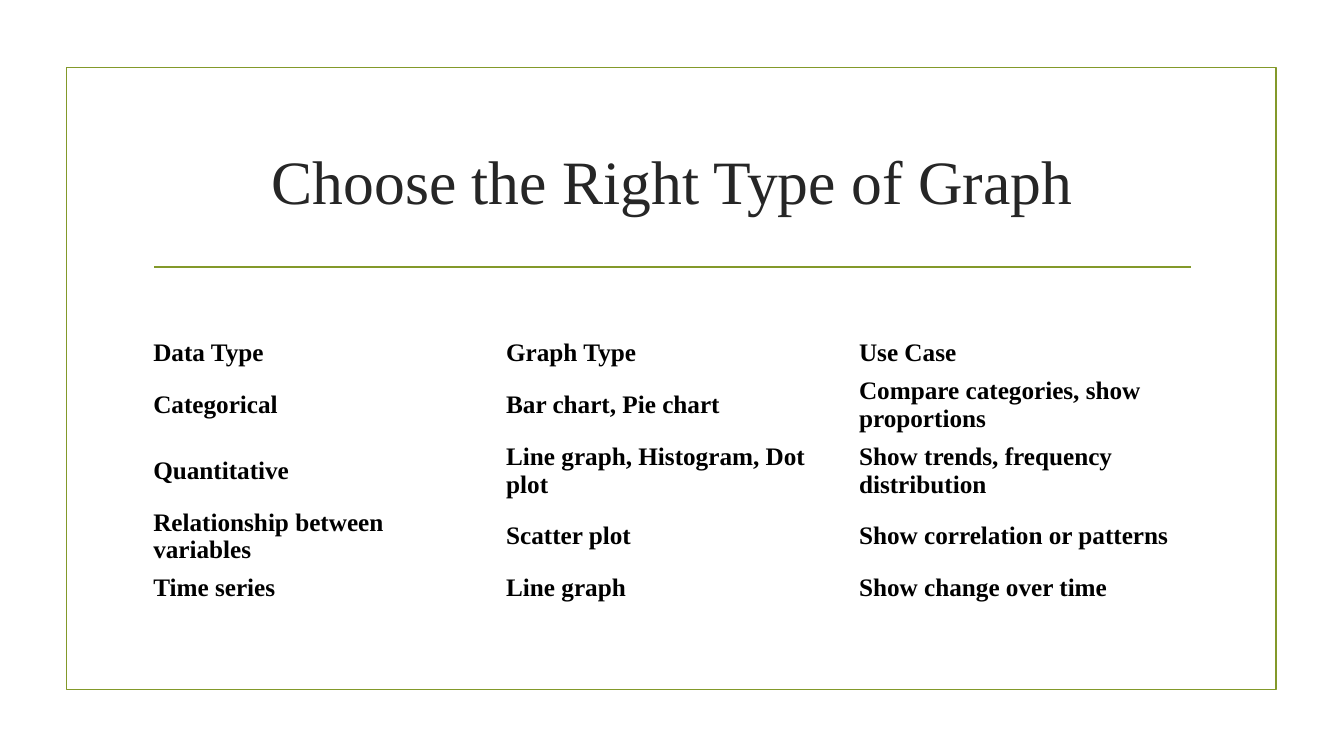
from pptx import Presentation
from pptx.dml.color import RGBColor
from pptx.enum.shapes import MSO_CONNECTOR, MSO_SHAPE
from pptx.enum.text import MSO_ANCHOR, PP_ALIGN
from pptx.oxml.ns import qn
from pptx.util import Inches, Pt
from lxml.etree import SubElement

TITLE = "Choose the Right Type of Graph"
ROWS = [
    ("Data Type", "Graph Type", "Use Case"),
    ("Categorical", "Bar chart, Pie chart", "Compare categories, show proportions"),
    ("Quantitative", "Line graph, Histogram, Dot plot", "Show trends, frequency distribution"),
    ("Relationship between variables", "Scatter plot", "Show correlation or patterns"),
    ("Time series", "Line graph", "Show change over time"),
]
HIGH = [0.37, 0.65, 0.65, 0.65, 0.37]
LEFT, COL = 1.42, 3.5
WIDE = COL * len(ROWS[0])
FONT = "Times New Roman"
OLIVE = RGBColor(0x83, 0x99, 0x2A)
DARK = RGBColor(0x26, 0x26, 0x26)
BLACK = RGBColor(0, 0, 0)


def box(*sides):
    return [Inches(side) for side in sides]


def write(frame, text, size, color, bold=False, align=PP_ALIGN.LEFT):
    frame.word_wrap = True
    para = frame.paragraphs[0]
    para.alignment = align
    run = para.add_run()
    run.text = text
    font = run.font
    font.name, font.size, font.bold = FONT, Pt(size), bold
    font.color.rgb = color


def stroke(line):
    line.color.rgb = OLIVE
    line.width = Pt(1.25)


def add_frame(slide):
    frame = slide.shapes.add_shape(MSO_SHAPE.RECTANGLE, *box(0.66, 0.67, 12, 6.17))
    frame.shadow.inherit = False
    frame.fill.background()
    stroke(frame.line)
    rule = slide.shapes.add_connector(MSO_CONNECTOR.STRAIGHT, *box(1.53, 2.65, 11.81, 2.65))
    stroke(rule.line)
    SubElement(rule._element.spPr, qn("a:effectLst"))


def add_title(slide):
    title = slide.shapes.title
    title.left, title.top, title.width, title.height = box(LEFT, 1.07, WIDE, 1.43)
    title.text_frame.vertical_anchor = MSO_ANCHOR.MIDDLE
    write(title.text_frame, TITLE, 44, DARK, align=PP_ALIGN.CENTER)


def add_grid(slide):
    shape = slide.shapes.add_table(len(ROWS), len(ROWS[0]), *box(LEFT, 3.31, WIDE, sum(HIGH)))
    table = shape.table
    table.first_row = table.horz_banding = False
    for col in table.columns:
        col.width = Inches(COL)
    for row, high, texts in zip(table.rows, HIGH, ROWS):
        row.height = Inches(high)
        for cell, text in zip(row.cells, texts):
            cell.fill.background()
            cell.vertical_anchor = MSO_ANCHOR.MIDDLE
            write(cell.text_frame, text, 18, BLACK, bold=True)


def main():
    deck = Presentation()
    deck.slide_width, deck.slide_height = box(13.33, 7.5)
    slide = deck.slides.add_slide(deck.slide_layouts[5])
    add_frame(slide)
    add_title(slide)
    add_grid(slide)
    deck.save("out.pptx")


if __name__ == "__main__":
    main()
